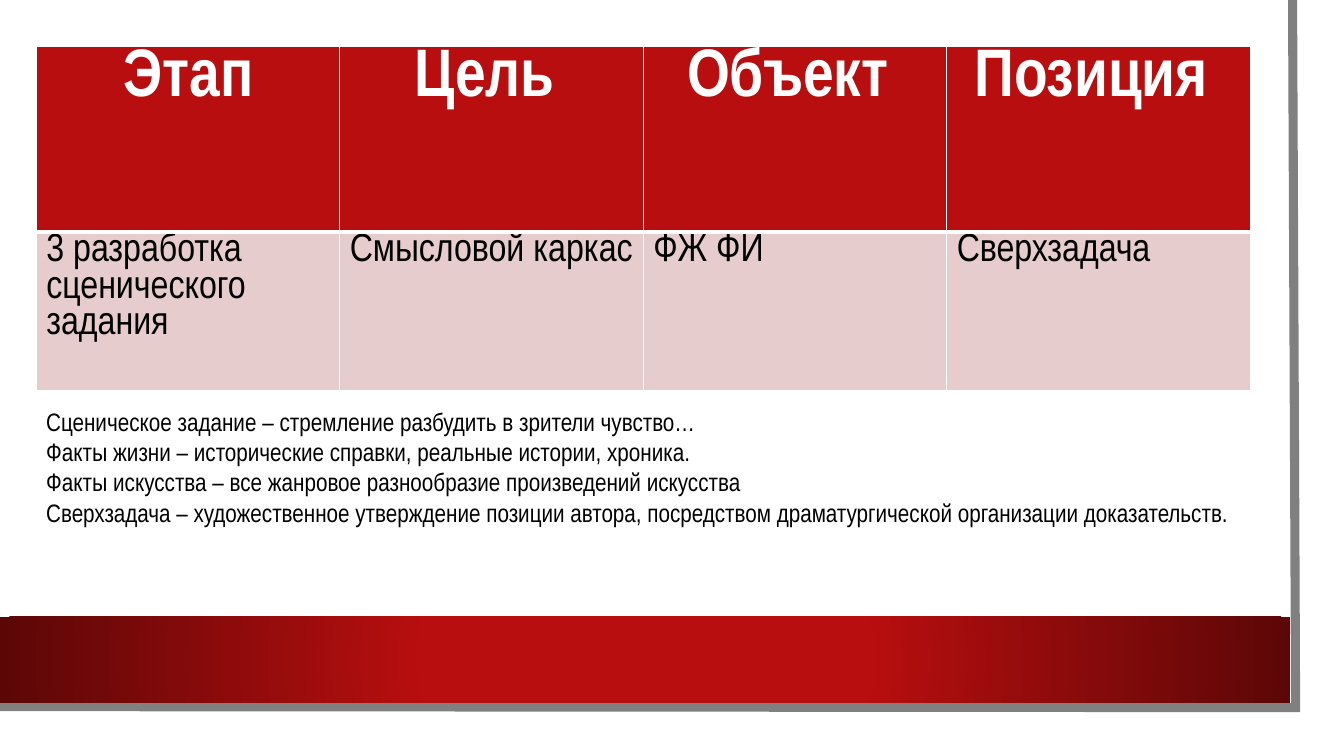
from lxml import etree
from pptx import Presentation, util as u
from pptx.dml.color import RGBColor
from pptx.enum import shapes, text
from pptx.oxml import parse_xml
from pptx.oxml.ns import nsdecls, qn

SCALE = 9144  # 100 px to the inch
FONT = "Arial Narrow"
WHITE = RGBColor(0xFF, 0xFF, 0xFF)
BLACK = RGBColor(0, 0, 0)
GREY = RGBColor(0x80, 0x80, 0x80)
RED = RGBColor(0xB8, 0x0E, 0x0F)
DARK_RED = RGBColor(0x5C, 0x07, 0x07)
PINK = RGBColor(0xE6, 0xCC, 0xCC)

ROWS = [
    ["Этап", "Цель ", "Объект ", "Позиция "],
    ["3 разработка сценического задания", "Смысловой каркас", "ФЖ ФИ", "Сверхзадача"],
]
NOTES = [
    "Сценическое задание – стремление разбудить в зрители чувство…",
    "Факты жизни – исторические справки, реальные истории, хроника.",
    "Факты искусства – все жанровое разнообразие произведений искусства",
    "Сверхзадача – художественное утверждение позиции автора, "
    "посредством драматургической организации доказательств.",
]


def px(length):
    return u.Emu(length * SCALE)


def add_span(para, words, size, color, bold=False):
    span = para.add_run()
    span.text = words
    span.font.name = FONT
    span.font.size = u.Pt(size)
    span.font.bold = bold
    span.font.color.rgb = color


def add_rectangle(page, left, top, width, height):
    box = page.shapes.add_shape(shapes.MSO_SHAPE.RECTANGLE,
                                px(left), px(top), px(width), px(height))
    box.shadow.inherit = False
    box.line.fill.background()
    box.fill.solid()
    box.fill.fore_color.rgb = WHITE
    return box


def fill_radial(box, inner, outer):
    properties = box._element.spPr
    gradient = parse_xml(
        f'<a:gradFill {nsdecls("a")} rotWithShape="1"><a:gsLst>'
        f'<a:gs pos="34000"><a:srgbClr val="{inner}"/></a:gs>'
        f'<a:gs pos="100000"><a:srgbClr val="{outer}"/></a:gs></a:gsLst>'
        '<a:path path="circle"><a:fillToRect l="50000" t="50000" r="50000" b="50000"/>'
        '</a:path></a:gradFill>')
    properties.replace(properties.find(qn("a:solidFill")), gradient)


def add_backdrop(page, left, top, width, height):
    # White sheet
    add_rectangle(page, left, top, width, height)
    # Grey edge along the right and bottom
    right, bottom = left + width - 25, top + height - 25
    builder = page.shapes.build_freeform(right - 3, top, scale=SCALE)
    builder.add_line_segments([(right, bottom), (left - 3, bottom - 1)], close=False)
    edge = builder.convert_to_shape()
    edge.shadow.inherit = False
    edge.fill.background()
    edge.line.color.rgb = GREY
    edge.line.width = u.Pt(6.5)
    outline = edge._element.spPr.find(qn("a:ln"))
    etree.SubElement(outline, qn("a:miter"), lim="800000")
    # Red band
    band = add_rectangle(page, left, bottom - 90, width - 30, 85)
    fill_radial(band, RED, DARK_RED)


def set_borders(cell, bottom_width, top_width):
    properties = cell._tc.get_or_add_tcPr()
    widths = {"lnL": 1, "lnR": 1, "lnT": top_width, "lnB": bottom_width}
    for index, (side, width) in enumerate(widths.items()):
        border = etree.Element(qn(f"a:{side}"), w=str(u.Pt(width)))
        fill = etree.SubElement(border, qn("a:solidFill"))
        etree.SubElement(fill, qn("a:srgbClr"), val=str(WHITE))
        properties.insert(index, border)


def add_stage_table(page, left, top, width, heights):
    frame = page.shapes.add_table(len(ROWS), len(ROWS[0]), px(left), px(top),
                                  px(width), px(sum(heights)))
    table = frame.table
    for column in table.columns:
        column.width = px(width // len(ROWS[0]))
    for row_index, (row, height) in enumerate(zip(ROWS, heights)):
        table.rows[row_index].height = px(height)
        header = row_index == 0
        for column_index, words in enumerate(row):
            cell = table.cell(row_index, column_index)
            cell.fill.solid()
            cell.fill.fore_color.rgb = RED if header else PINK
            cell.margin_left, cell.margin_right = px(10), px(9)
            cell.margin_top, cell.margin_bottom = px(1), 0
            set_borders(cell, 3 if header else 1, 1 if header else 3)
            para = cell.text_frame.paragraphs[0]
            if header:
                para.alignment = text.PP_ALIGN.CENTER
                add_span(para, words, 48, WHITE, bold=True)
            else:
                add_span(para, words, 28, BLACK)


def add_notes(page, left, top, width, height):
    box = page.shapes.add_textbox(px(left), px(top), px(width), px(height))
    frame = box.text_frame
    frame.word_wrap = True
    for index, words in enumerate(NOTES):
        para = frame.paragraphs[0] if index == 0 else frame.add_paragraph()
        add_span(para, words, 18, BLACK)


def main():
    deck = Presentation()
    deck.slide_width, deck.slide_height = px(1333), px(750)
    page = deck.slides.add_slide(deck.slide_layouts[6])
    add_backdrop(page, 0, 0, 1310, 727)
    add_stage_table(page, 36, 46, 1204, [184, 158])
    add_notes(page, 36, 398, 1204, 162)
    deck.save("out.pptx")


if __name__ == "__main__":
    main()
